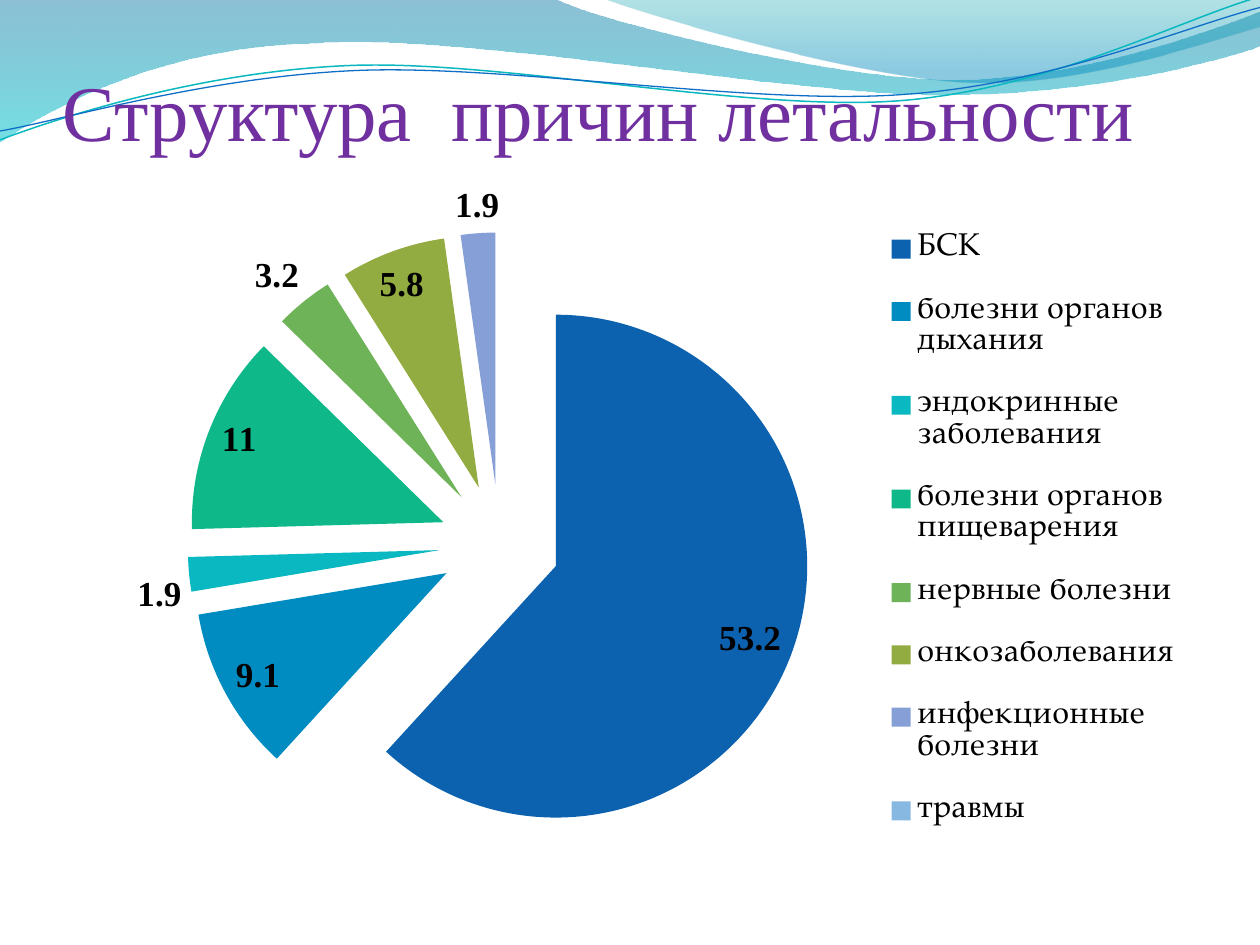
import math

import lxml.etree
import pptx
import pptx.chart.data
import pptx.dml.color
import pptx.enum.chart
import pptx.enum.text
import pptx.oxml.ns
import pptx.util

WIDTH, HEIGHT = 10, 7.5
COLORS = {
    "title": "7030A0", "text": "000000",
    "wave_top": "0074A1", "wave_bottom": "00C6CF",
    "crest_top": "00A1A9", "crest_bottom": "008BBF",
    "teal_line": "0AB8BF", "blue_line": "0F6FC6",
}
CAUSES = [  # category, value, slice colour
    ("БСК", 53.2, "0D62AF"),
    ("болезни органов дыхания", 9.1, "008BC1"),
    ("эндокринные заболевания", 1.9, "0AB8C1"),
    ("болезни органов пищеварения", 11, "0EB889"),
    ("нервные болезни", 3.2, "6EB357"),
    ("онкозаболевания", 5.8, "92AC41"),
    ("инфекционные болезни", 1.9, "879FD7"),
    ("травмы", None, "87B8E1"),
]

# Outlines in inches: a pair is a straight step, six numbers are a Bezier curve
WAVE = [(0, 0), (4.4, -0.01), (4.76, 0.17, 6.64, 0.63, 7.58, 0.63),
        (8.53, 0.63, 9.58, 0.26, 10, 0.09), (10.01, 0.36),
        (9.83, 0.44, 8.7, 0.76, 7.46, 0.75), (6.22, 0.75, 3.82, 0.28, 2.57, 0.34),
        (1.29, 0.36, 0.46, 0.83, -0.01, 1.13)]
CREST = [(4.79, -0.01), (5.09, 0.11, 6.82, 0.62, 7.69, 0.65),
         (8.56, 0.69, 9.61, 0.32, 10, 0.21), (10, 0)]
TEAL_LINE = [(0, 1.11), (0.48, 0.93, 1.58, 0.57, 2.77, 0.52),
             (3.95, 0.47, 5.93, 0.89, 7.13, 0.8), (8.33, 0.71, 9.38, 0.15, 9.98, -0.02)]
BLUE_LINE = [(0, 1.04), (0.47, 0.96, 1.64, 0.61, 2.83, 0.56),
             (4.03, 0.51, 5.97, 0.84, 7.17, 0.75), (8.36, 0.67, 9.41, 0.21, 10, 0.06)]
TILT = 2.7  # degrees by which the thin lines are turned to the left


def rgb(value):
    return pptx.dml.color.RGBColor.from_string(value)


def box(x, y, w, h):
    """Turn shares of the slide into lengths."""
    return [pptx.util.Inches(share * side)
            for share, side in zip((x, y, w, h), (WIDTH, HEIGHT) * 2)]


def turn(step, degrees, center):
    """Turn each point of an outline step clockwise about a center."""
    cos, sin = math.cos(math.radians(degrees)), math.sin(math.radians(degrees))
    turned = []
    for x, y in zip(step[::2], step[1::2]):
        dx, dy = x - center[0], y - center[1]
        turned += [center[0] + dx * cos - dy * sin, center[1] + dx * sin + dy * cos]
    return turned


def add_outline(s, outline, close):
    """Add a freeform, then join the three points of each curve step."""
    qn = pptx.oxml.ns.qn
    points = [(pptx.util.Inches(x), pptx.util.Inches(y))
              for step in outline for x, y in zip(step[::2], step[1::2])]
    builder = s.shapes.build_freeform(*points[0])
    builder.add_line_segments(points[1:], close=close)
    sp = builder.convert_to_shape()
    sp.shadow.inherit = False
    lines = iter(list(sp._element.iter(qn("a:lnTo"))))
    for step in outline[1:]:
        line = next(lines)
        if len(step) == 6:
            curve = lxml.etree.Element(qn("a:cubicBezTo"))
            line.addprevious(curve)
            for part in (line, next(lines), next(lines)):
                curve.append(part[0])
                part.getparent().remove(part)
    return sp


def add_wave(s, outline, stops):
    """Add a closed shape with a see-through gradient from top to bottom."""
    sp = add_outline(s, outline, True)
    sp.line.fill.background()
    sp.fill.gradient()
    sp.fill.gradient_angle = 270
    for stop, (position, color, opacity) in zip(sp.fill.gradient_stops, stops):
        stop.position = position
        stop.color.rgb = rgb(COLORS[color])
    clrs = sp._element.spPr.iter(pptx.oxml.ns.qn("a:srgbClr"))
    for clr, (position, color, opacity) in zip(clrs, stops):
        alpha = lxml.etree.SubElement(clr, pptx.oxml.ns.qn("a:alpha"))
        alpha.set("val", str(opacity * 1000))


def add_curve(s, outline, center, color, width):
    sp = add_outline(s, [turn(step, TILT, center) for step in outline], False)
    sp.rotation = -TILT
    sp.fill.background()
    sp.line.color.rgb = rgb(COLORS[color])
    sp.line.width = pptx.util.Pt(width)


def add_title(s, text):
    place = box(0.05, 0.77 / HEIGHT, 0.9, 0.48 / HEIGHT)
    tf = s.shapes.add_textbox(*place).text_frame
    tf.word_wrap = True
    tf.vertical_anchor = pptx.enum.text.MSO_ANCHOR.BOTTOM
    tf.margin_left = tf.margin_right = tf.margin_bottom = 0
    r = tf.paragraphs[0].add_run()
    r.text = text
    set_font(r.font, "Times New Roman", 45, "title")


def set_font(font, name, size, color, bold=False):
    font.name = name
    font.size = pptx.util.Pt(size)
    font.bold = bold
    font.color.rgb = rgb(COLORS[color])


def set_layout(element, index, mode, shares):
    """Place a chart part by shares of the chart's size."""
    qn = pptx.oxml.ns.qn
    for old in element.findall(qn("c:layout")):
        element.remove(old)
    layout = lxml.etree.Element(qn("c:layout"))
    manual = lxml.etree.SubElement(layout, qn("c:manualLayout"))
    values = [("xMode", "edge"), ("yMode", "edge"), *zip("xywh", shares)]
    if mode:
        values.insert(0, ("layoutTarget", mode))
    for tag, value in values:
        lxml.etree.SubElement(manual, qn("c:" + tag)).set("val", str(value))
    element.insert(index, layout)


def add_pie(s):
    data = pptx.chart.data.CategoryChartData()
    data.categories = [name for name, value, color in CAUSES]
    data.add_series("Series 1", [value for name, value, color in CAUSES])
    place = box(0.05, 1.33 / HEIGHT, 0.9, 5.59 / HEIGHT)
    chart = s.shapes.add_chart(
        pptx.enum.chart.XL_CHART_TYPE.PIE, *place, data).chart
    chart.has_title = False
    set_font(chart.font, "TeX Gyre Pagella", 18, "text")

    # Slices, pulled apart
    plot = chart.plots[0]
    plot.vary_by_categories = True
    series = plot.series[0]
    for i, (name, value, color) in enumerate(CAUSES):
        fill = series.points[i].format.fill
        fill.solid()
        fill.fore_color.rgb = rgb(color)
    explosion = lxml.etree.Element(pptx.oxml.ns.qn("c:explosion"))
    explosion.set("val", "24")
    series._element.find(pptx.oxml.ns.qn("c:dPt")).addprevious(explosion)

    # Value labels
    labels = series.data_labels
    labels.show_value = True
    labels.show_percentage = False
    labels.position = pptx.enum.chart.XL_LABEL_POSITION.BEST_FIT
    set_font(labels.font, "Times New Roman", 20, "text", bold=True)

    # Legend and plot placement
    chart.has_legend = True
    chart.legend.position = pptx.enum.chart.XL_LEGEND_POSITION.RIGHT
    chart.legend.include_in_layout = False
    set_layout(chart.legend._element, 1, None, (0.72, 0.05, 0.27, 0.93))
    plot_area = chart._chartSpace.chart.plotArea
    set_layout(plot_area, 0, "inner", (0.11, 0.09, 0.55, 0.89))


def main():
    prs = pptx.Presentation()
    prs.slide_width = pptx.util.Inches(WIDTH)
    prs.slide_height = pptx.util.Inches(HEIGHT)
    s = prs.slides.add_slide(prs.slide_layouts[6])

    # Waves along the top
    add_wave(s, WAVE, [(0, "wave_top", 45), (1, "wave_bottom", 55)])
    add_wave(s, CREST, [(0, "crest_top", 30), (0.8, "crest_bottom", 45)])
    add_curve(s, TEAL_LINE, (4.99, 0.57), "teal_line", 0.85)
    add_curve(s, BLUE_LINE, (5, 0.59), "blue_line", 0.75)

    # Content
    add_title(s, "Структура  причин летальности")
    add_pie(s)
    prs.save("out.pptx")


if __name__ == "__main__":
    main()
